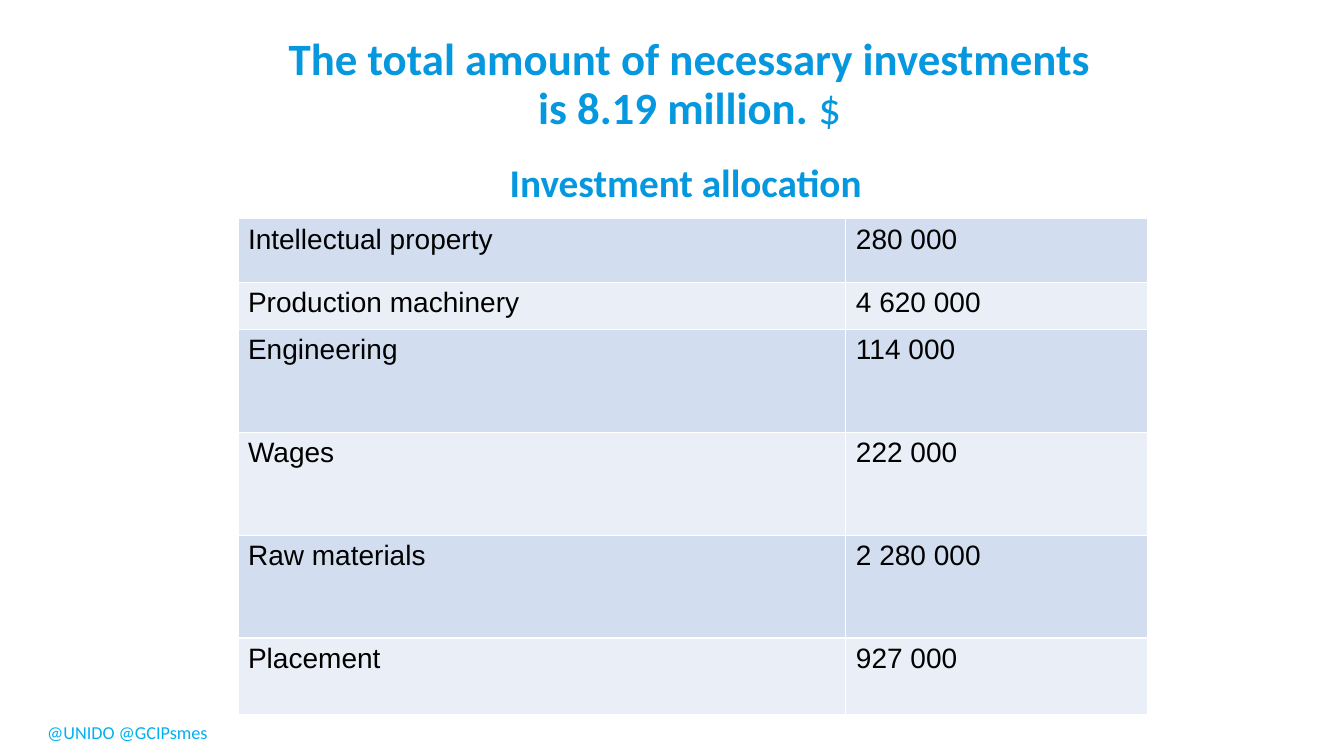
from lxml import etree
from pptx import Presentation
from pptx import util as u
from pptx.dml.color import RGBColor
from pptx.enum import text
from pptx.oxml import ns

BLUE = "0698DF"
BANDS = ("D2DEEF", "EAEFF7")
ALLOCATION = [
    ("Intellectual property", "280 000", 0.63),
    ("Production machinery", "4 620 000", 0.47),
    ("Engineering", "114 000", 1.02),
    ("Wages", "222 000", 1.02),
    ("Raw materials", "2 280 000", 1.02),
    ("Placement", "927 000", 0.76),
]


def rgb(value):
    return RGBColor.from_string(value)


def place(sp, x, y, w, h):
    sp.left, sp.top, sp.width, sp.height = map(u.Inches, (x, y, w, h))


def add_run(p, words, size, color, font="Calibri", bold=False):
    r = p.add_run()
    r.text = words
    r.font.name, r.font.size, r.font.bold = font, u.Pt(size), bold
    r.font.color.rgb = rgb(color)


def heading(sp, box, anchor):
    place(sp, *box)
    tf = sp.text_frame
    tf.word_wrap = True
    tf.auto_size = text.MSO_AUTO_SIZE.NONE
    tf.vertical_anchor = anchor
    p = tf.paragraphs[0]
    p.alignment = text.PP_ALIGN.CENTER
    p.line_spacing = 0.9
    p.space_before = u.Pt(0)
    return p


def remove_bullet(p):
    pPr = p._p.get_or_add_pPr()
    pPr.set("marL", "0")
    pPr.set("indent", "0")
    etree.SubElement(pPr, ns.qn("a:buNone"))


def cell_borders(cell, color):
    tcPr = cell._tc.get_or_add_tcPr()
    for i, side in enumerate(("lnL", "lnR", "lnT", "lnB")):
        ln = etree.Element(ns.qn("a:" + side), w=str(u.Pt(1)))
        fill = etree.SubElement(ln, ns.qn("a:solidFill"))
        etree.SubElement(fill, ns.qn("a:srgbClr"), val=color)
        tcPr.insert(i, ln)


def allocation_table(s):
    frame = s.shapes.add_table(len(ALLOCATION), 2, u.Inches(2.36), u.Inches(2.17),
                               u.Inches(9.02), u.Inches(4.92))
    table = frame.table
    for column, width in zip(table.columns, (6.03, 2.99)):
        column.width = u.Inches(width)
    for i, (item, amount, height) in enumerate(ALLOCATION):
        table.rows[i].height = u.Inches(height)
        for j, words in enumerate((item, amount)):
            cell = table.cell(i, j)
            cell.fill.solid()
            cell.fill.fore_color.rgb = rgb(BANDS[i % 2])
            cell_borders(cell, "FFFFFF")
            add_run(cell.text_frame.paragraphs[0], words, 20, "000000", "Arial")


def handles(s):
    sp = s.shapes.add_textbox(0, 0, 0, 0)
    place(sp, 0.37, 7.11, 1.81, 0.32)
    tf = sp.text_frame
    tf.word_wrap = False
    add_run(tf.paragraphs[0], "@UNIDO @GCIPsmes", 13, "00B0F0")


def main():
    prs = Presentation()
    prs.slide_width, prs.slide_height = u.Inches(13.33), u.Inches(7.5)
    s = prs.slides.add_slide(prs.slide_layouts[1])
    handles(s)

    p = heading(s.shapes.title, (2.53, 0.28, 8.62, 1.14), text.MSO_ANCHOR.MIDDLE)
    add_run(p, "The total amount of necessary investments", 32, BLUE, bold=True)
    p.add_line_break()
    add_run(p, "is 8.19 million. ", 32, BLUE, bold=True)
    add_run(p, "$", 32, BLUE)

    p = heading(s.placeholders[1], (4.15, 1.59, 5.3, 0.5), text.MSO_ANCHOR.BOTTOM)
    remove_bullet(p)
    add_run(p, "Investment allocation", 28, BLUE, bold=True)

    allocation_table(s)
    prs.save("out.pptx")


if __name__ == "__main__":
    main()
